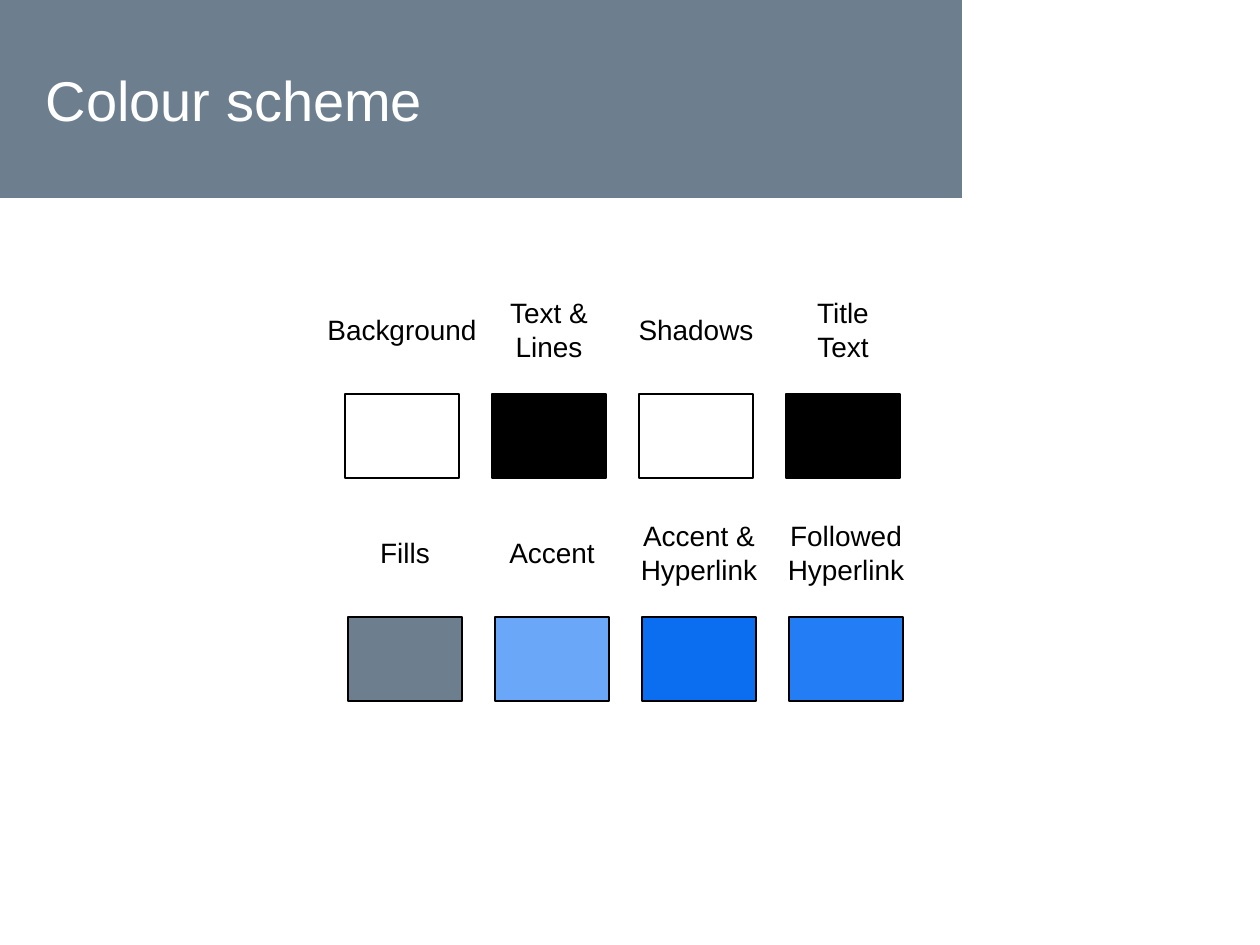
from pptx import Presentation
from pptx import util as u
from pptx.dml.color import RGBColor
from pptx.enum import shapes, text

PX = 914400 / 126
FONT = "Arial"
SLATE, WHITE, BLACK = "6D7E8E", "FFFFFF", "000000"
PITCH, SWATCH_W, SWATCH_H = 147, 114, 84
LABEL_CENTRE, LINE_H, LABEL_PAD = 40, 34, 13

ROWS = [
    (345, 290, [
        (["Background"], 176, WHITE),
        (["Text &", "Lines"], 108, BLACK),
        (["Shadows"], 144, WHITE),
        (["Title\nText"], 82, BLACK),
    ]),
    (348, 513, [
        (["Fills"], 80, SLATE),
        (["Accent"], 114, "6BA7F8"),
        (["Accent &", "Hyperlink"], 146, "0B6DEF"),
        (["Followed", "Hyperlink"], 146, "237DF5"),
    ]),
]


def px(*lengths):
    return [u.Emu(round(length * PX)) for length in lengths]


def paint(target, colour):
    target.solid()
    target.fore_color.rgb = RGBColor.from_string(colour)


def add_span(para, words, size, colour):
    span = para.add_run()
    span.text = words
    span.font.name = FONT
    span.font.size = u.Pt(size)
    paint(span.font.fill, colour)


def add_rectangle(page, left, top, width, height, colour):
    box = page.shapes.add_shape(
        shapes.MSO_SHAPE.RECTANGLE, *px(left, top, width, height))
    box.shadow.inherit = False
    paint(box.fill, colour)
    return box


def add_header(page, left, top, width, height):
    band = add_rectangle(page, left, top, width, height, SLATE)
    band.line.fill.background()
    title = page.shapes.title
    title.left, title.top, title.width, title.height = px(
        left + 33, top + 20, width - 69, height - 40)
    band.element.addnext(title.element)
    frame = title.text_frame
    frame.word_wrap = True
    frame.vertical_anchor = text.MSO_ANCHOR.MIDDLE
    para = frame.paragraphs[0]
    para.alignment = text.PP_ALIGN.LEFT
    add_span(para, "Colour scheme", 32, WHITE)


def add_label(page, centre_x, centre_y, width, paragraphs):
    lines = sum(len(words.split("\n")) for words in paragraphs)
    height = lines * LINE_H + LABEL_PAD
    box = page.shapes.add_textbox(
        *px(centre_x - width / 2, centre_y - height / 2, width, height))
    frame = box.text_frame
    frame.word_wrap = False
    frame.auto_size = text.MSO_AUTO_SIZE.SHAPE_TO_FIT_TEXT
    for number, words in enumerate(paragraphs):
        para = frame.add_paragraph() if number else frame.paragraphs[0]
        para.alignment = text.PP_ALIGN.CENTER
        for position, line in enumerate(words.split("\n")):
            if position:
                para.add_line_break()
            add_span(para, line, 16, BLACK)


def add_swatch_row(page, left, top, swatches):
    for column, (paragraphs, label_width, colour) in enumerate(swatches):
        x = left + column * PITCH
        swatch = add_rectangle(page, x, top + 104, SWATCH_W, SWATCH_H, colour)
        paint(swatch.line.fill, BLACK)
        swatch.line.width = u.Pt(0.75)
        add_label(page, x + SWATCH_W / 2, top + LABEL_CENTRE,
                  label_width, paragraphs)


def main():
    deck = Presentation()
    deck.slide_width, deck.slide_height = px(1260, 945)
    page = deck.slides.add_slide(deck.slide_layouts[5])
    paint(page.background.fill, WHITE)
    add_header(page, 0, 0, 962, 198)
    for left, top, swatches in ROWS:
        add_swatch_row(page, left, top, swatches)
    deck.save("out.pptx")


if __name__ == "__main__":
    main()
